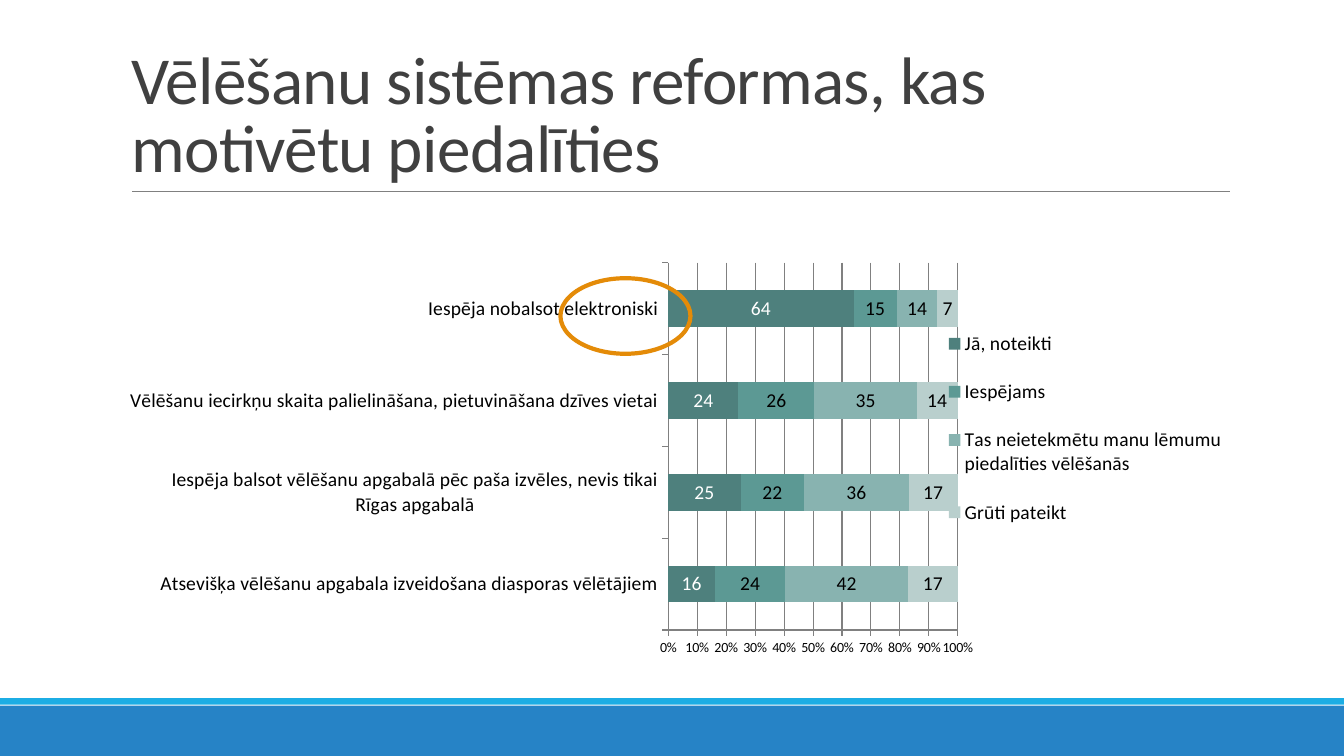
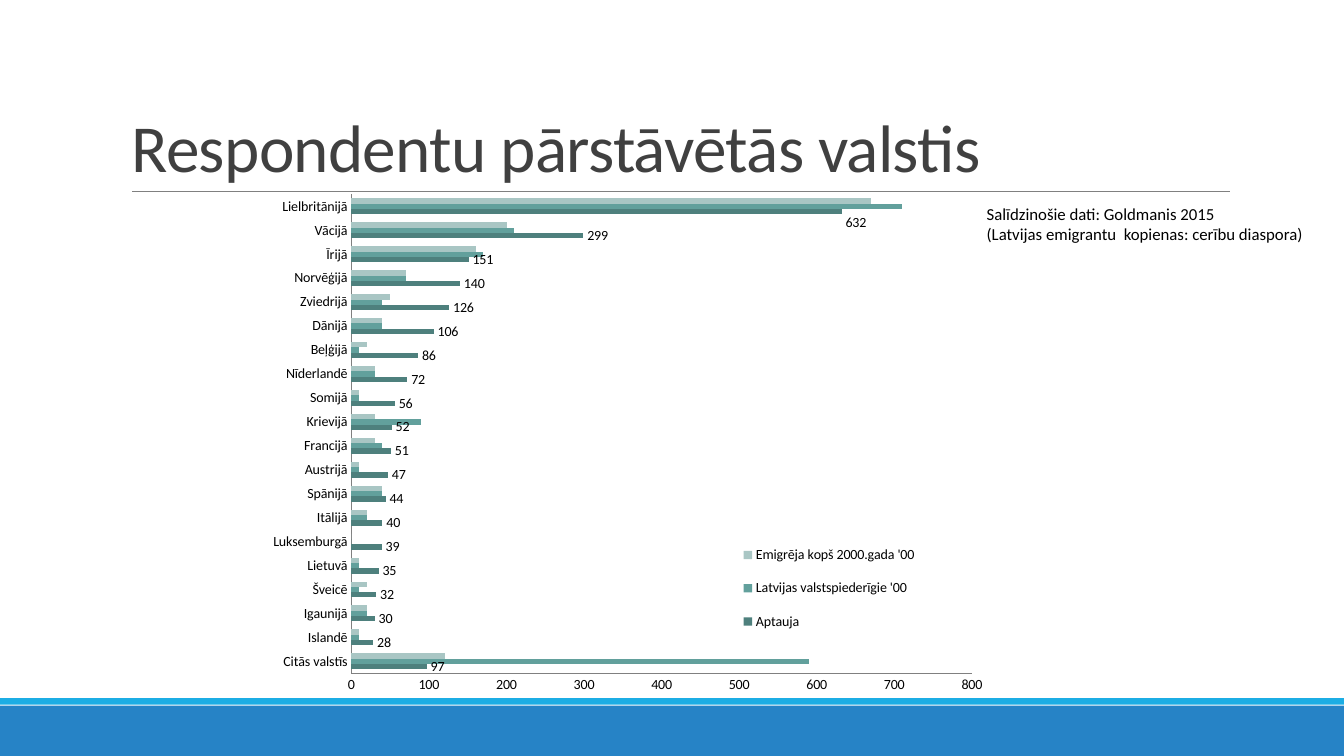
from lxml import etree
from pptx import Presentation
from pptx import util as u
from pptx.chart.data import CategoryChartData
from pptx.dml.color import RGBColor
from pptx.enum import chart as charts, shapes, text
from pptx.oxml.ns import qn

COLUMNS, ROWS = 160, 90
CELL = u.Inches(1) // 12
FONT = "Calibri"

BLACK = RGBColor(0x00, 0x00, 0x00)
WHITE = RGBColor(0xFF, 0xFF, 0xFF)
TITLE_GRAY = RGBColor(0x40, 0x40, 0x40)
LINE_GRAY = RGBColor(0x80, 0x80, 0x80)
BLUE = RGBColor(0x26, 0x83, 0xC6)
CYAN = RGBColor(0x1C, 0xAD, 0xE4)
ORANGE = RGBColor(0xE4, 0x8B, 0x08)
TEAL_DARK = RGBColor(0x4E, 0x80, 0x7D)
TEAL = RGBColor(0x5C, 0x99, 0x94)
TEAL_MEDIUM = RGBColor(0x62, 0xA0, 0x9C)
TEAL_LIGHT = RGBColor(0x88, 0xB3, 0xB0)
TEAL_PALE = RGBColor(0xB9, 0xCF, 0xCD)
TEAL_MIST = RGBColor(0xA9, 0xC6, 0xC4)

REFORMS = [
    "Atsevišķa vēlēšanu apgabala izveidošana diasporas vēlētājiem",
    "Iespēja balsot vēlēšanu apgabalā pēc paša izvēles, nevis tikai Rīgas apgabalā",
    "Vēlēšanu iecirkņu skaita palielināšana, pietuvināšana dzīves vietai",
    "Iespēja nobalsot elektroniski",
]
REFORM_ANSWERS = [
    ("Jā, noteikti", (16, 25, 24, 64), TEAL_DARK, WHITE),
    ("Iespējams", (24, 22, 26, 15), TEAL, BLACK),
    ("Tas neietekmētu manu lēmumu piedalīties vēlēšanās", (42, 36, 35, 14), TEAL_LIGHT, BLACK),
    ("Grūti pateikt", (17, 17, 14, 7), TEAL_PALE, BLACK),
]
COUNTRIES = [
    "Citās valstīs", "Islandē", "Igaunijā", "Šveicē", "Lietuvā", "Luksemburgā", "Itālijā",
    "Spānijā", "Austrijā", "Francijā", "Krievijā", "Somijā", "Nīderlandē", "Beļģijā",
    "Dānijā", "Zviedrijā", "Norvēģijā", "Īrijā", "Vācijā", "Lielbritānijā",
]
COUNTRY_COUNTS = [
    ("Aptauja", (97, 28, 30, 32, 35, 39, 40, 44, 47, 51, 52, 56, 72, 86, 106, 126, 140, 151,
                 299, 632), TEAL_DARK, BLACK),
    ("Latvijas valstspiederīgie '00", (590, 10, 20, 10, 10, 0, 20, 40, 10, 40, 90, 10, 30, 10,
                                       40, 40, 70, 170, 210, 710), TEAL_MEDIUM, None),
    ("Emigrēja kopš 2000.gada '00", (120, 10, 20, 20, 10, 0, 20, 40, 10, 30, 30, 10, 30, 20,
                                     40, 50, 70, 160, 200, 670), TEAL_MIST, None),
]


def cells(*counts):
    return [round(count * CELL) for count in counts]


def manual_layout(**settings):
    """Return a c:layout element; settings are its children in schema order."""
    layout = etree.Element(qn("c:layout"))
    manual = etree.SubElement(layout, qn("c:manualLayout"))
    for name, value in settings.items():
        etree.SubElement(manual, qn("c:" + name)).set("val", str(value))
    return layout


def area_layout(x, y, w, h, **target):
    return manual_layout(**target, xMode="edge", yMode="edge", x=x, y=y, w=w, h=h)


class Deck:
    """Holds the presentation style and the current slide; lengths are grid cells."""

    def __init__(self):
        self.presentation = Presentation()
        self.presentation.slide_width, self.presentation.slide_height = cells(COLUMNS, ROWS)
        self.slide = None

    def new_slide(self, title):
        self.slide = self.presentation.slides.add_slide(self.presentation.slide_layouts[6])
        self.shape(shapes.MSO_SHAPE.RECTANGLE, (0, 84, COLUMNS, 6), fill=BLUE)
        self.shape(shapes.MSO_SHAPE.RECTANGLE, (0, 83.1, COLUMNS, 0.8), fill=CYAN)
        self.rule(15.72, 146.45, 22.8)
        frame = self.text((14.5, 3.72, 132, 19.08), [title], 48, TITLE_GRAY)
        frame.vertical_anchor = text.MSO_ANCHOR.BOTTOM
        paragraph = frame.paragraphs[0]
        paragraph.line_spacing = 0.85
        paragraph.runs[0]._r.get_or_add_rPr().set("spc", "-50")

    def shape(self, kind, box, fill=None, line=None, width=3):
        shape = self.slide.shapes.add_shape(kind, *cells(*box))
        shape.shadow.inherit = False
        if fill is None:
            shape.fill.background()
        else:
            shape.fill.solid()
            shape.fill.fore_color.rgb = fill
        if line is None:
            shape.line.fill.background()
        else:
            shape.line.color.rgb = line
            shape.line.width = u.Pt(width)

    def rule(self, left, right, top):
        line = self.slide.shapes.add_connector(
            shapes.MSO_CONNECTOR.STRAIGHT, *cells(left, top, right, top))
        line.line.color.rgb = LINE_GRAY
        line.line.width = u.Pt(0.5)
        etree.SubElement(line._element.spPr, qn("a:effectLst"))

    def text(self, box, lines, size, color, wrap=True):
        frame = self.slide.shapes.add_textbox(*cells(*box)).text_frame
        frame.word_wrap = wrap
        frame.text = "\n".join(lines)
        for paragraph in frame.paragraphs:
            paragraph.font.name = FONT
            paragraph.font.size = u.Pt(size)
            paragraph.font.color.rgb = color
        return frame

    def bar_chart(self, kind, box, categories, series_rows, plot_area, legend_area,
                  size=10, axis_format="0", grid=False):
        """Add a bar chart; each series row is name, values, fill and label colour."""
        data = CategoryChartData(number_format="0")
        data.categories = categories
        for name, values, *_ in series_rows:
            data.add_series(name, values)
        chart = self.slide.shapes.add_chart(kind, *cells(*box), data).chart
        chart.has_title = False
        chart.font.name = FONT
        chart.font.size = u.Pt(10)
        chart.font.color.rgb = BLACK

        plot = chart.plots[0]
        plot.gap_width = 150
        plot.vary_by_categories = False
        for series, (_, _, fill, label_color) in zip(plot.series, series_rows):
            series.format.fill.solid()
            series.format.fill.fore_color.rgb = fill
            if label_color is not None:
                labels = series.data_labels
                labels.show_value = True
                labels.number_format = "0"
                labels.number_format_is_linked = False
                labels.font.size = u.Pt(size)
                labels.font.color.rgb = label_color

        tick = charts.XL_TICK_MARK.OUTSIDE if grid else charts.XL_TICK_MARK.NONE
        for axis in (chart.category_axis, chart.value_axis):
            axis.major_tick_mark = tick
            axis.minor_tick_mark = charts.XL_TICK_MARK.NONE
            axis.format.line.color.rgb = LINE_GRAY
        chart.category_axis.tick_labels.font.size = u.Pt(size)
        chart.value_axis.has_major_gridlines = grid
        if grid:
            chart.value_axis.major_gridlines.format.line.color.rgb = LINE_GRAY
        chart.value_axis.tick_labels.number_format = axis_format
        chart.value_axis.tick_labels.number_format_is_linked = False

        chart.has_legend = True
        legend = chart.legend
        legend.position = charts.XL_LEGEND_POSITION.RIGHT
        legend.include_in_layout = False
        legend.font.size = u.Pt(size)
        self.place(legend._element, 1, area_layout(*legend_area))
        self.place(chart._chartSpace.chart.plotArea, 0,
                   area_layout(*plot_area, layoutTarget="inner"))
        return chart

    @staticmethod
    def place(parent, index, layout):
        for former in parent.findall(qn("c:layout")):
            parent.remove(former)
        parent.insert(index, layout)

    def lower_label(self, chart, series_index, point_index, shift):
        """Move one data label down by a share of the chart height."""
        label = chart.plots[0].series[series_index].points[point_index].data_label
        label.position = charts.XL_LABEL_POSITION.OUTSIDE_END
        self.place(label._get_or_add_dLbl(), 1, manual_layout(x=0, y=shift))


def main():
    deck = Deck()

    deck.new_slide("Vēlēšanu sistēmas reformas, kas motivētu piedalīties")
    deck.bar_chart(
        charts.XL_CHART_TYPE.BAR_STACKED_100, (15.5, 30.3, 138.5, 48.6),
        REFORMS, REFORM_ANSWERS, plot_area=(0.46, 0.02, 0.25, 0.9),
        legend_area=(0.69, 0.13, 0.26, 0.59), size=14, axis_format="0%", grid=True)
    deck.shape(shapes.MSO_SHAPE.OVAL, (66.72, 33.12, 15.48, 9), line=ORANGE)

    deck.new_slide("Respondentu pārstāvētās valstis")
    chart = deck.bar_chart(
        charts.XL_CHART_TYPE.BAR_CLUSTERED, (22.4, 21.25, 97.2, 63.36),
        COUNTRIES, COUNTRY_COUNTS, plot_area=(0.2, 0.03, 0.76, 0.9),
        legend_area=(0.66, 0.66, 0.25, 0.22))
    deck.lower_label(chart, 0, len(COUNTRIES) - 1, 0.02)
    deck.text((116.28, 23.64, 40.44, 6),
              ["Salīdzinošie dati: Goldmanis 2015",
               "(Latvijas emigrantu  kopienas: cerību diaspora)"], 12, BLACK, wrap=False)

    deck.presentation.save("out.pptx")


if __name__ == "__main__":
    main()
